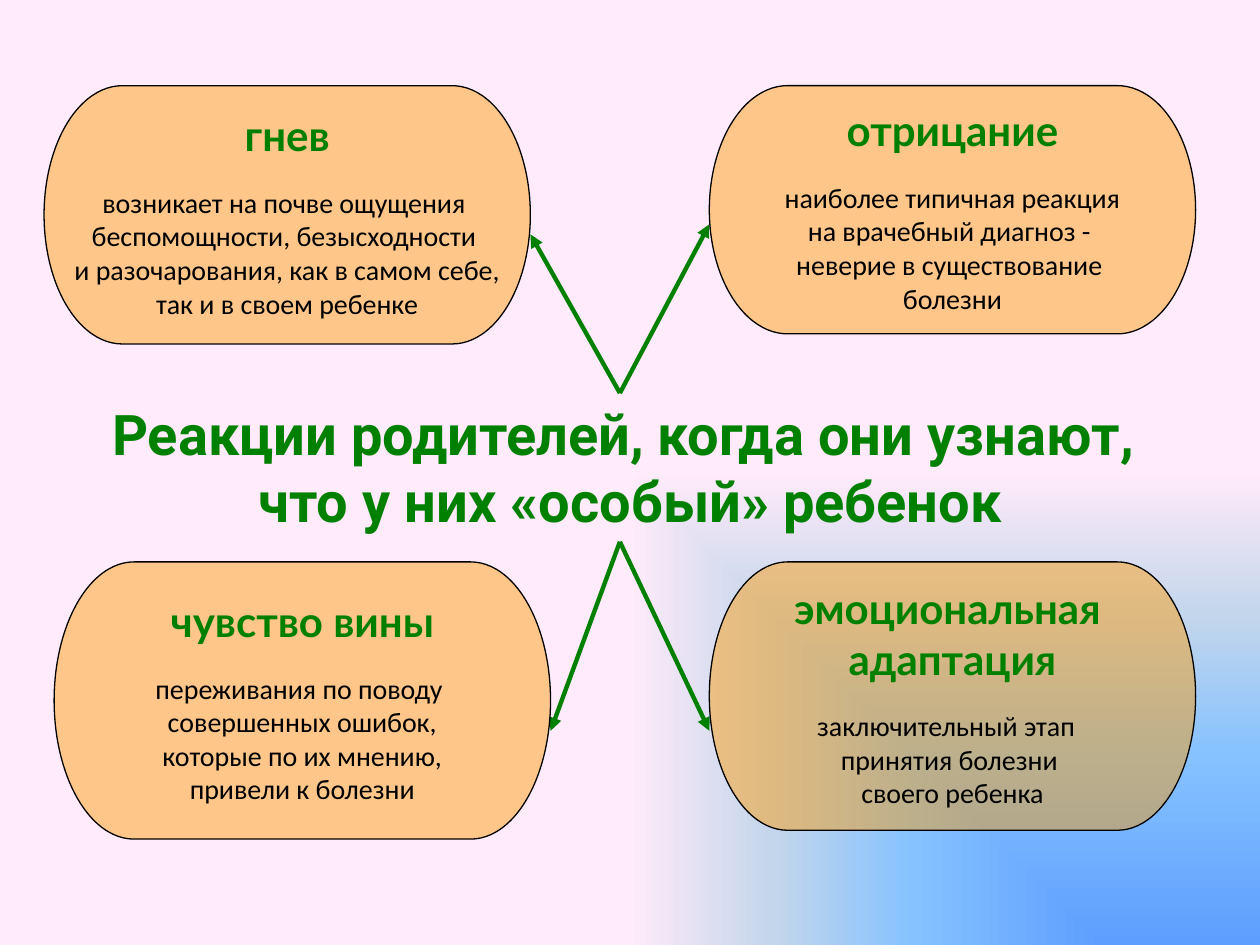
from lxml import etree
from pptx import Presentation
from pptx.dml.color import RGBColor
from pptx.enum.shapes import MSO_CONNECTOR as Connector, MSO_SHAPE as Shape
from pptx.enum.text import MSO_ANCHOR as Anchor, MSO_AUTO_SIZE as AutoSize, PP_ALIGN as Align
from pptx.oxml import parse_xml
from pptx.oxml.ns import nsdecls, qn
from pptx.util import Inches, Pt

# Content
HEADING = ["Реакции родителей, когда они узнают, ", "что у них «особый» ребенок"]
# Each reaction: column, row, width, height, arrow tip height, name lines, description lines
REACTIONS = [
    ("left", "top", 3.86, 2.05, 1.86, ["гнев"],
     ["возникает на почве ощущения ", "беспомощности, безысходности ",
      "и разочарования, как в самом себе,", " так и в своем ребенке "]),
    ("right", "top", 3.86, 1.97, 1.78, ["отрицание"],
     ["наиболее типичная реакция", "на врачебный диагноз - ",
      "неверие в существование ", "болезни"]),
    ("left", "bottom", 3.94, 2.2, 5.8, ["чувство вины"],
     ["переживания по поводу ", "совершенных ошибок,",
      " которые по их мнению, ", "привели к болезни"]),
    ("right", "bottom", 3.86, 2.13, 5.8, ["эмоциональная ", "адаптация"],
     ["заключительный этап  ", "принятия болезни ", "своего ребенка"]),
]
COLORS = {"green": "008000", "orange": "FF9900", "black": "000000"}
BACKGROUND = [(0, "5E9EFF"), (40, "85C2FF"), (70, "C4D6EB"), (100, "FFEBFA")]

# Grid, in inches
ROW_TOP = {"top": 0.68, "bottom": 4.46}
LEFT_EDGE = {"top": 0.35, "bottom": 0.43}
RIGHT_COLUMN = 5.63
HUB_X = 4.92
HUB_Y = {"top": 3.12, "bottom": 4.3}


def color(name):
    return RGBColor.from_string(COLORS[name])


def add_run(paragraph, text, font, size, tint, bold=False):
    run = paragraph.add_run()
    run.text = text
    run.font.name, run.font.size, run.font.bold = font, Pt(size), bold
    run.font.color.rgb = color(tint)


def paint_background(slide):
    slide.background.fill.gradient()
    old = slide.element.find(".//" + qn("p:bgPr")).find(qn("a:gradFill"))
    stops = "".join(f'<a:gs pos="{pos * 1000}"><a:srgbClr val="{tint}"/></a:gs>'
                    for pos, tint in BACKGROUND)
    old.getparent().replace(old, parse_xml(
        f'<a:gradFill {nsdecls("a")} rotWithShape="1"><a:gsLst>{stops}</a:gsLst>'
        '<a:path path="rect"><a:fillToRect l="100000" t="100000"/></a:path></a:gradFill>'))


def add_heading(slide):
    heading = slide.shapes.title
    heading.left, heading.top = Inches(0.51), Inches(3.12)
    heading.width, heading.height = Inches(8.99), Inches(1.17)
    frame = heading.text_frame
    frame.word_wrap, frame.auto_size = True, AutoSize.NONE
    frame.vertical_anchor = Anchor.MIDDLE
    paragraph = frame.paragraphs[0]
    paragraph.alignment = Align.CENTER
    for i, line in enumerate(HEADING):
        if i:
            paragraph.add_line_break()
        add_run(paragraph, line, "Roboto", 32, "green", True)


def add_arrow(slide, start, end):
    arrow = slide.shapes.add_connector(Connector.STRAIGHT, *map(Inches, start + end))
    arrow.line.color.rgb = color("green")
    arrow.line.width = Pt(2.5)
    etree.SubElement(arrow.line._get_or_add_ln(), qn("a:tailEnd"), type="triangle")
    etree.SubElement(arrow._element.spPr, qn("a:effectLst"))


def add_reaction(slide, left, top, width, height, names, description):
    card = slide.shapes.add_shape(Shape.FLOWCHART_TERMINATOR,
                                  *map(Inches, (left, top, width, height)))
    card.shadow.inherit = False
    card.fill.solid()
    card.fill.fore_color.rgb = color("orange")
    tint = card._element.spPr.find(qn("a:solidFill"))[0]
    etree.SubElement(tint, qn("a:alpha"), val="45000")
    card.line.color.rgb = color("black")
    card.line.width = Pt(0.75)

    frame = card.text_frame
    frame.word_wrap, frame.vertical_anchor = False, Anchor.MIDDLE
    for i, line in enumerate(names + description):
        paragraph = frame.add_paragraph() if i else frame.paragraphs[0]
        paragraph.alignment = Align.CENTER
        if i < len(names):
            add_run(paragraph, line, "Lato", 24, "green", True)
        else:
            add_run(paragraph, line, "Calibri", 16, "black")
        if i == len(names):
            paragraph.space_before = Pt(14.4)


def main():
    deck = Presentation()
    deck.slide_width, deck.slide_height = Inches(10), Inches(7.5)
    slide = deck.slides.add_slide(deck.slide_layouts[5])
    paint_background(slide)
    add_heading(slide)

    # Arrows run from the heading to the inner side of each card
    cards = []
    for column, row, width, height, tip_y, names, description in REACTIONS:
        left = LEFT_EDGE[row] if column == "left" else RIGHT_COLUMN
        tip_x = left + width if column == "left" else left
        add_arrow(slide, (HUB_X, HUB_Y[row]), (tip_x, tip_y))
        cards.append((left, ROW_TOP[row], width, height, names, description))
    for card in cards:
        add_reaction(slide, *card)

    deck.save("out.pptx")


if __name__ == "__main__":
    main()
